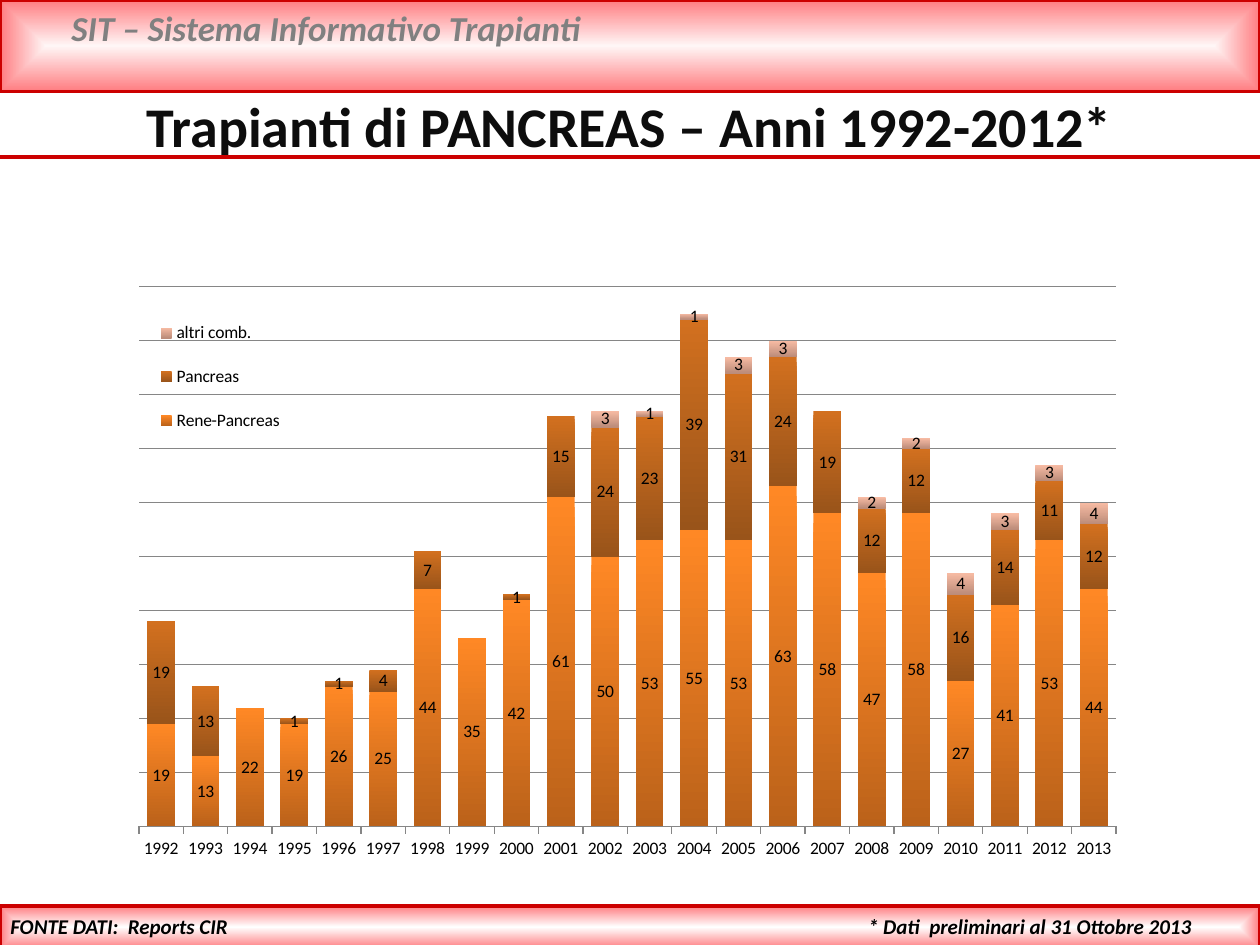
import lxml.etree
import pptx
import pptx.chart.data
import pptx.dml.color
import pptx.enum.chart
import pptx.enum.shapes
import pptx.enum.text
import pptx.oxml
import pptx.oxml.ns
import pptx.util
from pptx.util import Cm

RGBColor = pptx.dml.color.RGBColor
BLACK = RGBColor(0x00, 0x00, 0x00)
INK = RGBColor(0x0D, 0x0D, 0x0D)
GREY = RGBColor(0x80, 0x80, 0x80)
GRID = RGBColor(0x86, 0x86, 0x86)
RED = RGBColor(0xCC, 0x00, 0x00)
PINK = RGBColor(0xFF, 0x7C, 0x80)
PALE = RGBColor(0xFF, 0xF6, 0xF6)
WHITE = RGBColor(0xFF, 0xFF, 0xFF)
ORANGE = (RGBColor(0xFF, 0x88, 0x25), RGBColor(0xBB, 0x62, 0x1A))
BROWN = (RGBColor(0xD2, 0x70, 0x1F), RGBColor(0x99, 0x54, 0x1A))
ROSE = (RGBColor(0xF8, 0xBC, 0xA4), RGBColor(0xBC, 0x8C, 0x7A))

FONT = "Calibri"
SLIDE_WIDTH = Cm(25.4)
ALIGN = pptx.enum.text.PP_ALIGN

YEARS = [str(year) for year in range(1992, 2014)]
TRANSPLANTS = [
    ("Rene-Pancreas", ORANGE,
     [19, 13, 22, 19, 26, 25, 44, 35, 42, 61, 50,
      53, 55, 53, 63, 58, 47, 58, 27, 41, 53, 44]),
    ("Pancreas", BROWN,
     [19, 13, None, 1, 1, 4, 7, None, 1, 15, 24,
      23, 39, 31, 24, 19, 12, 12, 16, 14, 11, 12]),
    ("altri comb.", ROSE,
     [None] * 10 + [3, 1, 1, 3, 3, None, 2, 2, 4, 3, 3, 4]),
]


def write_text(shape, text, size, color, align=ALIGN.LEFT, italic=True, wrap=True,
               anchor=pptx.enum.text.MSO_ANCHOR.TOP):
    frame = shape.text_frame
    frame.word_wrap = wrap
    frame.vertical_anchor = anchor
    paragraph = frame.paragraphs[0]
    paragraph.alignment = align
    run = paragraph.add_run()
    run.text = text
    run.font.name = FONT
    run.font.size = pptx.util.Pt(size)
    run.font.bold = True
    run.font.italic = italic
    run.font.color.rgb = color


def add_label(slide, left, top, width, height, text, **text_format):
    write_text(slide.shapes.add_textbox(left, top, width, height), text, **text_format)


def set_gradient(fill, first, last):
    fill.gradient()
    fill.gradient_angle = 270
    for stop, color in zip(fill.gradient_stops, (first, last)):
        stop.color.rgb = color


def add_band(slide, top, height, center):
    band = slide.shapes.add_shape(
        pptx.enum.shapes.MSO_SHAPE.RECTANGLE, 0, top, SLIDE_WIDTH, height)
    band.shadow.inherit = False
    band.line.color.rgb = RED
    band.line.width = pptx.util.Pt(2)
    set_gradient(band.fill, center, PINK)
    linear = band._element.spPr.find(".//" + pptx.oxml.ns.qn("a:lin"))
    linear.getparent().replace(linear, pptx.oxml.parse_xml(
        f'<a:path {pptx.oxml.ns.nsdecls("a")} path="shape">'
        '<a:fillToRect l="50000" t="50000" r="50000" b="50000"/></a:path>'))


def add_rule(slide, top):
    rule = slide.shapes.add_connector(
        pptx.enum.shapes.MSO_CONNECTOR.STRAIGHT, 0, top, SLIDE_WIDTH, top)
    rule.line.color.rgb = RED
    rule.line.width = pptx.util.Pt(2)
    lxml.etree.SubElement(rule._element.spPr, pptx.oxml.ns.qn("a:effectLst"))


def make_layout(x, y, width, height, inner=False):
    target = '<c:layoutTarget val="inner"/>' if inner else ""
    return pptx.oxml.parse_xml(
        f'<c:layout {pptx.oxml.ns.nsdecls("c")}><c:manualLayout>{target}'
        '<c:xMode val="edge"/><c:yMode val="edge"/>'
        f'<c:x val="{x}"/><c:y val="{y}"/><c:w val="{width}"/><c:h val="{height}"/>'
        '</c:manualLayout></c:layout>')


def format_axes(chart):
    counts = chart.value_axis
    counts.minimum_scale = 0
    counts.maximum_scale = 100
    counts.major_unit = 10
    counts.has_major_gridlines = True
    counts.major_gridlines.format.line.color.rgb = GRID
    counts.major_gridlines.format.line.width = pptx.util.Pt(0.75)
    counts.visible = False
    years = chart.category_axis
    years.major_tick_mark = pptx.enum.chart.XL_TICK_MARK.OUTSIDE
    years.format.line.color.rgb = GRID
    years.format.line.width = pptx.util.Pt(0.75)


def place_plot_and_legend(chart):
    plot_area = chart._chartSpace.chart.plotArea
    for old in plot_area.findall(pptx.oxml.ns.qn("c:layout")):
        plot_area.remove(old)
    plot_area.insert(0, make_layout(0.02, 0.02, 0.96, 0.9, inner=True))
    chart.has_legend = True
    legend = chart.legend
    legend.position = pptx.enum.chart.XL_LEGEND_POSITION.LEFT
    legend.include_in_layout = False
    for old in legend._element.findall(pptx.oxml.ns.qn("c:layout")):
        legend._element.remove(old)
    position = legend._element.find(pptx.oxml.ns.qn("c:legendPos"))
    position.addnext(make_layout(0.03, 0.04, 0.14, 0.26))


def add_transplant_chart(slide):
    data = pptx.chart.data.CategoryChartData()
    data.categories = YEARS
    for name, _, values in TRANSPLANTS:
        data.add_series(name, values)
    chart = slide.shapes.add_chart(
        pptx.enum.chart.XL_CHART_TYPE.COLUMN_STACKED,
        Cm(2.39), Cm(5.54), Cm(20.52), Cm(12.09), data).chart
    chart.has_title = False
    chart.font.name = FONT
    chart.font.size = pptx.util.Pt(10)
    chart.font.color.rgb = BLACK
    plot = chart.plots[0]
    plot.gap_width = 60
    plot.overlap = 100
    plot.vary_by_categories = False
    for series, (_, colors, _) in zip(plot.series, TRANSPLANTS):
        set_gradient(series.format.fill, *colors)
        series.data_labels.show_value = True
    format_axes(chart)
    place_plot_and_legend(chart)


def place_title(slide):
    title = slide.shapes.title
    title.left, title.top, title.width, title.height = 0, Cm(1.7), SLIDE_WIDTH, Cm(1.63)
    write_text(title, "Trapianti di PANCREAS – Anni 1992-2012*", size=32, color=INK,
               align=ALIGN.CENTER, italic=False,
               anchor=pptx.enum.text.MSO_ANCHOR.MIDDLE)


def main():
    presentation = pptx.Presentation()
    presentation.slide_width = SLIDE_WIDTH
    presentation.slide_height = Cm(19.05)
    slide = presentation.slides.add_slide(presentation.slide_layouts[5])

    add_band(slide, 0, Cm(1.85), PALE)
    add_label(slide, Cm(1.19), 0, Cm(22.81), Cm(1.12),
              "SIT – Sistema Informativo Trapianti", size=20, color=GREY)
    add_band(slide, Cm(18.26), Cm(0.86), WHITE)
    add_rule(slide, Cm(3.17))
    place_title(slide)
    add_label(slide, Cm(17.25), Cm(18.29), Cm(8.15), Cm(0.76),
              "* Dati  preliminari al 31 Ottobre 2013", size=12, color=BLACK)
    add_label(slide, Cm(-0.1), Cm(18.29), Cm(4.95), Cm(0.76),
              "FONTE DATI:  Reports CIR", size=12, color=BLACK,
              align=ALIGN.RIGHT, wrap=False)
    add_transplant_chart(slide)
    presentation.save("out.pptx")


if __name__ == "__main__":
    main()
